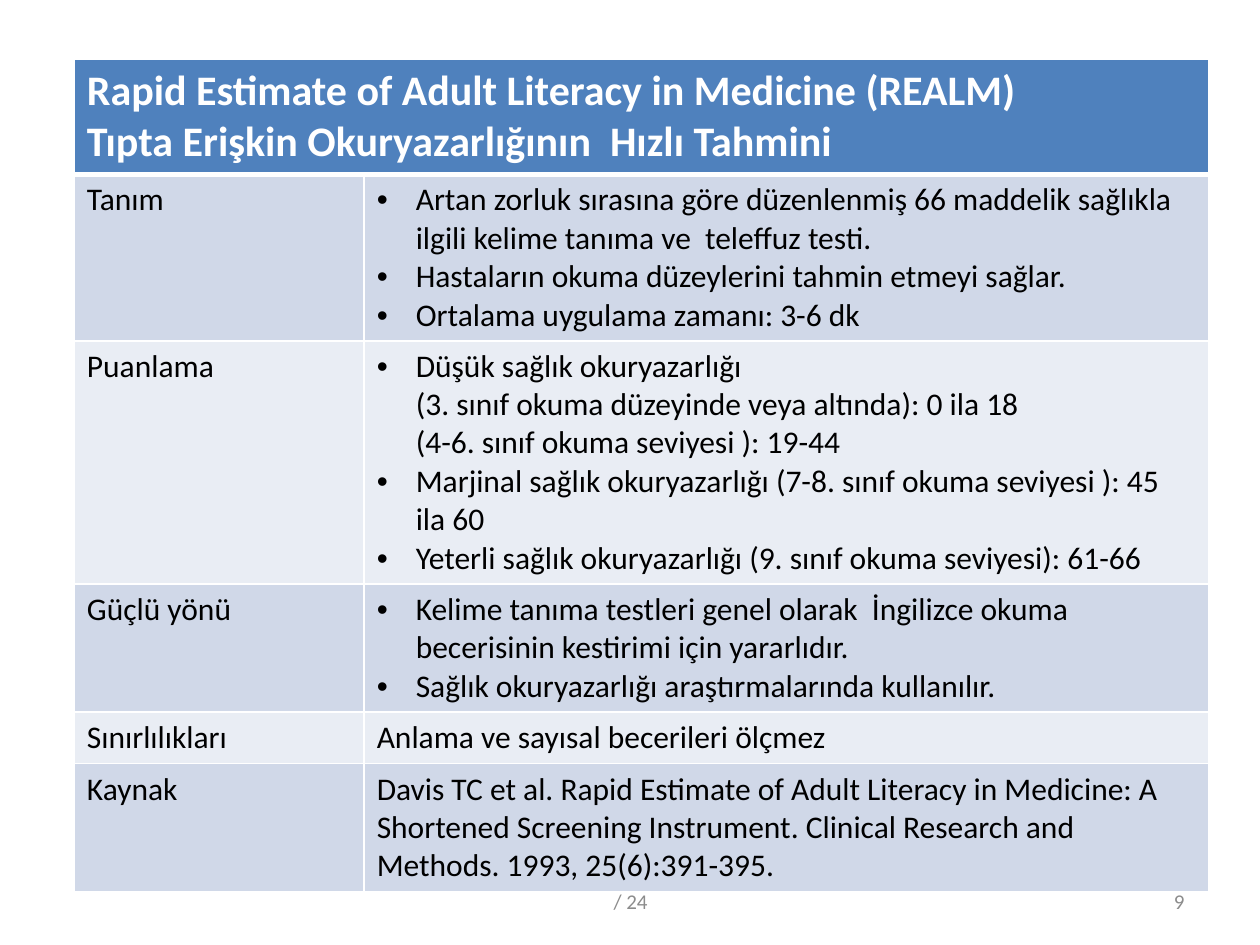
from lxml.etree import SubElement
from pptx import Presentation
from pptx.dml.color import RGBColor
from pptx.enum.text import MSO_ANCHOR as Anchor, PP_ALIGN as Align
from pptx.oxml.ns import qn
from pptx.util import Inches, Pt

HEAD = [
    "Rapid Estimate of Adult Literacy in Medicine (REALM)",
    "Tıpta Erişkin Okuryazarlığının  Hızlı Tahmini",
]
# label, paragraphs, bulleted
ROWS = [
    ("Tanım", [
        "Artan zorluk sırasına göre düzenlenmiş 66 maddelik sağlıkla ilgili "
        "kelime tanıma ve  teleffuz testi.",
        "Hastaların okuma düzeylerini tahmin etmeyi sağlar.",
        "Ortalama uygulama zamanı: 3-6 dk",
    ], True),
    ("Puanlama", [
        "Düşük sağlık okuryazarlığı\n"
        "(3. sınıf okuma düzeyinde veya altında): 0 ila 18\n"
        "(4-6. sınıf okuma seviyesi ): 19-44",
        "Marjinal sağlık okuryazarlığı (7-8. sınıf okuma seviyesi ): 45 ila 60",
        "Yeterli sağlık okuryazarlığı (9. sınıf okuma seviyesi): 61-66",
    ], True),
    ("Güçlü yönü", [
        "Kelime tanıma testleri genel olarak  İngilizce okuma becerisinin "
        "kestirimi için yararlıdır.",
        "Sağlık okuryazarlığı araştırmalarında kullanılır.",
    ], True),
    ("Sınırlılıkları", ["Anlama ve sayısal becerileri ölçmez"], False),
    ("Kaynak", [
        "Davis TC et al. Rapid Estimate of Adult Literacy in Medicine: A "
        "Shortened Screening Instrument. Clinical Research and Methods. "
        "1993, 25(6):391-395.",
    ], False),
]
# text, left, width, alignment
FOOT = [("/ 24", 3.42, 3.17, Align.CENTER), ("9", 7.17, 2.33, Align.RIGHT)]

COLS = [2.3, 6.7]
ROW_H = 0.41
INDENT = Inches(0.31)
FONT = "Calibri"
WHITE = RGBColor(255, 255, 255)
BLACK = RGBColor(0, 0, 0)
GREY = RGBColor(0x8C, 0x8C, 0x8C)
BLUE = RGBColor(0x4F, 0x81, 0xBD)
BANDS = [RGBColor(0xD0, 0xD8, 0xE8), RGBColor(0xE9, 0xED, 0xF4)]


def write(frame, paras, size, color, bold=False, align=None, bullet=False):
    for i, text in enumerate(paras):
        para = frame.paragraphs[0] if i == 0 else frame.add_paragraph()
        if align is not None:
            para.alignment = align
        if bullet:
            props = para._p.get_or_add_pPr()
            props.set("marL", str(INDENT))
            props.set("indent", str(-INDENT))
            SubElement(props, qn("a:buFont"), typeface="Arial")
            SubElement(props, qn("a:buChar"), char="•")
        for j, line in enumerate(text.split("\n")):
            if j:
                para.add_line_break()
            run = para.add_run()
            run.text = line
            font = run.font
            font.name, font.size, font.bold = FONT, Pt(size), bold
            font.color.rgb = color
        for br in para._p.findall(qn("a:br")):
            SubElement(br, qn("a:rPr"), sz=str(size * 100))


def paint(cell, color, top=1, bottom=1):
    """Set white borders, in points, and the fill of a cell."""
    props = cell._tc.get_or_add_tcPr()
    for side, width in (("L", 1), ("R", 1), ("T", top), ("B", bottom)):
        line = SubElement(props, qn(f"a:ln{side}"), w=str(Pt(width)))
        fill = SubElement(line, qn("a:solidFill"))
        SubElement(fill, qn("a:srgbClr"), val=str(WHITE))
    cell.fill.solid()
    cell.fill.fore_color.rgb = color


prs = Presentation()
prs.slide_width, prs.slide_height = Inches(10), Inches(7.5)
slide = prs.slides.add_slide(prs.slide_layouts[6])

count = len(ROWS) + 1
table = slide.shapes.add_table(
    count, len(COLS), Inches(0.59), Inches(0.47),
    Inches(sum(COLS)), Inches(ROW_H * count)).table
for col, width in zip(table.columns, COLS):
    col.width = Inches(width)

head = table.cell(0, 0)
head.merge(table.cell(0, 1))
for c in range(len(COLS)):
    paint(table.cell(0, c), BLUE, bottom=3)
write(head.text_frame, HEAD, 24, WHITE, bold=True)

for r, (label, paras, bullet) in enumerate(ROWS, 1):
    name, body = table.cell(r, 0), table.cell(r, 1)
    for cell in (name, body):
        paint(cell, BANDS[(r - 1) % 2], top=3 if r == 1 else 1)
    write(name.text_frame, [label], 18, BLACK)
    write(body.text_frame, paras, 18, BLACK, bullet=bullet)

for text, left, width, align in FOOT:
    box = slide.shapes.add_textbox(
        Inches(left), Inches(6.95), Inches(width), Inches(0.4))
    frame = box.text_frame
    frame.word_wrap = True
    frame.vertical_anchor = Anchor.MIDDLE
    write(frame, [text], 12, GREY, align=align)

prs.save("out.pptx")
